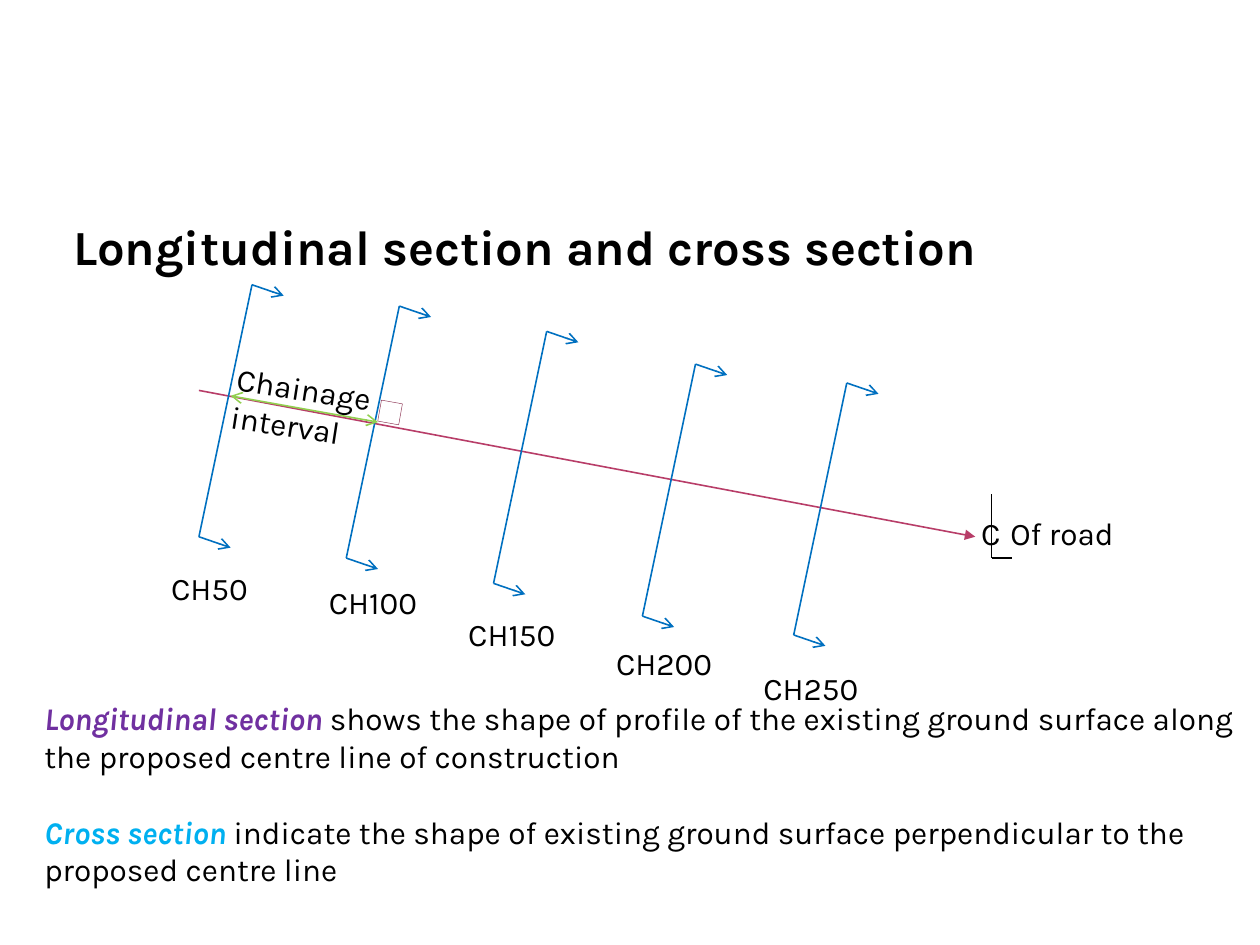
from lxml import etree
from pptx import Presentation
from pptx.dml.color import RGBColor
from pptx.enum.shapes import MSO_CONNECTOR, MSO_SHAPE
from pptx.enum.text import MSO_ANCHOR, MSO_AUTO_SIZE, PP_ALIGN
from pptx.oxml.ns import qn
from pptx.util import Cm, Pt

STRAIGHT, RECTANGLE = MSO_CONNECTOR.STRAIGHT, MSO_SHAPE.RECTANGLE
TOP, MIDDLE, LEFT = MSO_ANCHOR.TOP, MSO_ANCHOR.MIDDLE, PP_ALIGN.LEFT
GROW = MSO_AUTO_SIZE.SHAPE_TO_FIT_TEXT

COLORS = {
    "text": "000000",
    "centre line": "B83D68",
    "right angle": "882D4D",
    "section": "0070C0",
    "interval": "92D050",
    "longitudinal": "7030A0",
    "cross": "00B0F0",
}

# Chainage, upper end of the section line, corner of the label (cm)
SECTIONS = [
    (50, (5.08, 5.74), (3.2, 11.35)),
    (100, (8.05, 6.17), (6.38, 11.63)),
    (150, (11.02, 6.68), (9.19, 12.27)),
    (200, (14.02, 7.34), (12.17, 12.85)),
    (250, (17.07, 7.72), (15.14, 13.36)),
]
SECTION_RUN = (-1.07, 5.08)
VIEW_ARROW = (0.64, 0.22)

DEFINITIONS = [
    ("Longitudinal section ", "longitudinal",
     "shows the shape of profile of the existing ground surface along "
     "the proposed centre line of construction"),
    ("Cross section ", "cross",
     "indicate the shape of existing ground surface perpendicular to "
     "the proposed centre line"),
]


def color(name):
    return RGBColor.from_string(COLORS[name])


def shifted(point, step):
    return point[0] + step[0], point[1] + step[1]


class SectionPage:
    """Holds the text style and the slide being drawn; lengths are in cm."""

    font_name = "Karla"
    font_size = 18
    line_width = 0.9

    def __init__(self, page):
        self.page = page

    def place(self, box, left, top, width, height):
        values = {"left": left, "top": top, "width": width, "height": height}
        for name, value in values.items():
            setattr(box, name, Cm(value))

    def format_frame(self, frame, anchor=TOP):
        values = {"word_wrap": True, "auto_size": GROW, "vertical_anchor": anchor}
        for name, value in values.items():
            setattr(frame, name, value)

    def span(self, para, text, color_name="text", **extra):
        span = para.add_run()
        span.text = text
        values = {"name": self.font_name, "size": Pt(self.font_size),
                  "bold": False, "italic": False}
        for name, value in (values | extra).items():
            setattr(span.font, name, value)
        span.font.color.rgb = color(color_name)

    def title(self, text, *area):
        box = self.page.shapes.title
        self.place(box, *area)
        self.format_frame(box.text_frame, MIDDLE)
        para = box.text_frame.paragraphs[0]
        para.alignment = LEFT
        self.span(para, text, size=Pt(28), bold=True)

    def definitions(self, entries, *area):
        box = self.page.placeholders[1]
        self.place(box, *area)
        frame = box.text_frame
        self.format_frame(frame)
        for index, (term, term_color, meaning) in enumerate(entries):
            para = frame.add_paragraph() if index else frame.paragraphs[0]
            properties = para._p.get_or_add_pPr()
            properties.set("marL", "0")
            properties.set("indent", "0")
            etree.SubElement(properties, qn("a:buNone"))
            para.space_before = Pt(21.5 if index else 0)
            self.span(para, term, term_color, bold=True, italic=True)
            self.span(para, meaning)

    def label(self, lines, left, top, width, height=1.02, rotation=0):
        box = self.page.shapes.add_textbox(
            Cm(left), Cm(top), Cm(width), Cm(height))
        box.rotation = rotation
        frame = box.text_frame
        self.format_frame(frame)
        for index, text in enumerate(lines):
            para = frame.add_paragraph() if index else frame.paragraphs[0]
            self.span(para, text)

    def line(self, start, end, color_name, head=None, tail=None, group=None):
        shapes = (group or self.page).shapes
        line = shapes.add_connector(
            STRAIGHT, *(Cm(value) for value in (*start, *end)))
        line.line.width = Pt(self.line_width)
        line.line.color.rgb = color(color_name)
        outline = line.line._get_or_add_ln()
        for tag, kind in (("a:headEnd", head), ("a:tailEnd", tail)):
            if kind:
                etree.SubElement(outline, qn(tag), type=kind)
        etree.SubElement(line._element.spPr, qn("a:effectLst"))

    def section(self, top):
        """Draw a cross-section line with a viewing arrow at each end."""
        group = self.page.shapes.add_group_shape()
        bottom = shifted(top, SECTION_RUN)
        self.line(top, bottom, "section", group=group)
        for end in (top, bottom):
            self.line(end, shifted(end, VIEW_ARROW), "section",
                      tail="arrow", group=group)

    def right_angle(self, left, top, size, rotation):
        mark = self.page.shapes.add_shape(
            RECTANGLE, Cm(left), Cm(top), Cm(size), Cm(size))
        mark.rotation = rotation
        mark.shadow.inherit = False
        mark.fill.background()
        mark.line.width = Pt(0.25)
        mark.line.color.rgb = color("right angle")


def main():
    deck = Presentation()
    deck.slide_width, deck.slide_height = Cm(25.4), Cm(19.05)
    page = SectionPage(deck.slides.add_slide(deck.slide_layouts[1]))

    page.title("Longitudinal section and cross section", 1.22, 4.24, 21.84, 1.45)
    page.definitions(DEFINITIONS, 0.64, 13.97, 24.76, 4.11)

    page.line((4.01, 7.87), (19.66, 10.82), "centre line", tail="triangle")
    page.right_angle(7.65, 8.1, 0.43, 10.1)
    for chainage, top, corner in SECTIONS:
        page.section(top)
        page.label([f"CH{chainage}"], *corner, 2.97)

    page.line((4.65, 7.98), (7.62, 8.51), "interval", head="arrow", tail="arrow")
    page.label(["Chainage", "interval"], 4.45, 7.39, 4.09, 1.8, rotation=8.8)

    # Centre line symbol: a C crossed by an L
    page.label(["C"], 19.53, 10.24, 1.14)
    page.line((19.99, 9.96), (19.99, 11.25), "text")
    page.line((19.99, 11.25), (20.4, 11.25), "text")
    page.label(["Of road"], 20.12, 10.24, 3.25)

    deck.save("out.pptx")


if __name__ == "__main__":
    main()
